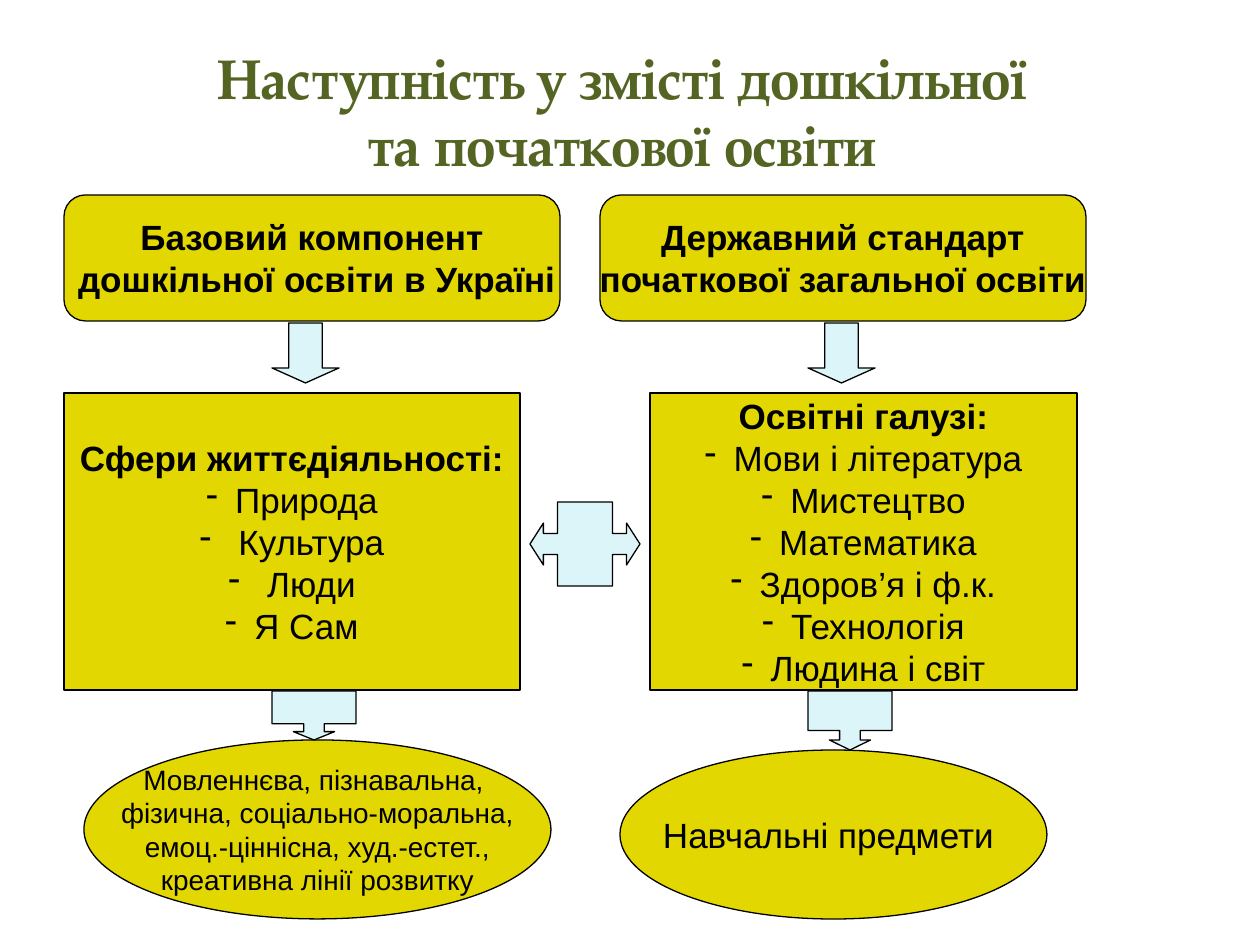
from lxml import etree
from pptx import Presentation
from pptx import util as u
from pptx.dml.color import RGBColor
from pptx.enum import shapes, text
from pptx.oxml.ns import qn

SCALE = 914400 / 126
GOLD = RGBColor(0xE2, 0xD7, 0x00)
AQUA = RGBColor(0xDB, 0xF5, 0xF9)
OLIVE = RGBColor(0x54, 0x64, 0x22)
BLACK = RGBColor(0, 0, 0)
KIND = shapes.MSO_SHAPE


def px(n):
    return u.Emu(round(n * SCALE))


class Deck:
    def __init__(self, show):
        self.slide = show.slides.add_slide(show.slide_layouts[5])
        self.face = "Arial"
        self.hang = px(29)

    def place(self, shape, box):
        shape.left, shape.top, shape.width, shape.height = map(px, box)

    def label(self, para, words, size, color=BLACK, bold=False, face=None):
        para.alignment = text.PP_ALIGN.CENTER
        run = para.add_run()
        run.text = words
        font = run.font
        font.name = face or self.face
        font.size = u.Pt(size)
        font.bold = bold
        font.color.rgb = color

    def title(self, box, lines):
        shape = self.slide.shapes.title
        self.place(shape, box)
        frame = shape.text_frame
        frame.word_wrap = True
        frame.auto_size = text.MSO_AUTO_SIZE.NONE
        frame.vertical_anchor = text.MSO_ANCHOR.BOTTOM
        para = frame.paragraphs[0]
        for i, line in enumerate(lines):
            if i:
                para.add_line_break()
            self.label(para, line, 32, OLIVE, True, "TeX Gyre Pagella")

    def shape(self, kind, box, fill=GOLD, adj=()):
        shape = self.slide.shapes.add_shape(kind, *map(px, box))
        shape.shadow.inherit = False
        shape.fill.solid()
        shape.fill.fore_color.rgb = fill
        shape.line.color.rgb = BLACK
        shape.line.width = u.Pt(0.75)
        for i, value in enumerate(adj):
            shape.adjustments[i] = value
        return shape

    def dash(self, para):
        props = para._p.get_or_add_pPr()
        props.set("marL", str(self.hang))
        props.set("indent", str(-self.hang))
        etree.SubElement(props, qn("a:buFontTx"))
        etree.SubElement(props, qn("a:buChar")).set("char", "-")

    def panel(self, kind, box, lines, size=20, bold=False, items=(), adj=()):
        frame = self.shape(kind, box, adj=adj).text_frame
        frame.word_wrap = False
        frame.vertical_anchor = text.MSO_ANCHOR.MIDDLE
        for i, line in enumerate([*lines, *items]):
            para = frame.add_paragraph() if i else frame.paragraphs[0]
            listed = i >= len(lines)
            if listed:
                self.dash(para)
            self.label(para, line, size, bold=bold and not listed)

    def arrow(self, kind, box, adj):
        self.shape(kind, box, AQUA, adj)


def main():
    show = Presentation()
    show.slide_width, show.slide_height = px(1260), px(945)
    deck = Deck(show)
    deck.title((94, 55, 1071, 129),
               ["Наступність у змісті дошкільної ", "та початкової освіти "])

    deck.panel(KIND.RECTANGLE, (64, 393, 456, 297),
               ["Сфери життєдіяльності:"], bold=True,
               items=["Природа", " Культура", " Люди", "Я Сам"])
    deck.panel(KIND.RECTANGLE, (650, 393, 427, 297),
               ["Освітні галузі:"], bold=True,
               items=["Мови і література", "Мистецтво", "Математика",
                      "Здоров’я і ф.к.", "Технологія", "Людина і світ"])

    heads = [
        (64, 496, ["Базовий компонент", " дошкільної освіти в Україні"]),
        (600, 486, ["Державний стандарт", "початкової загальної освіти"]),
    ]
    for left, width, lines in heads:
        deck.panel(KIND.ROUNDED_RECTANGLE, (left, 195, width, 126), lines,
                   bold=True, adj=[0.17])

    deck.panel(KIND.OVAL, (84, 740, 467, 179),
               ["Мовленнєва, пізнавальна, ", "фізична, соціально-моральна,",
                "емоц.-ціннісна, худ.-естет.,", " креативна лінії розвитку "],
               size=16)
    deck.panel(KIND.OVAL, (620, 750, 427, 169), ["Навчальні предмети "])

    for left, height, ratio in [(272, 49, 0.42), (808, 59, 0.35)]:
        deck.arrow(KIND.DOWN_ARROW, (left, 323, 67, 60), [0.5, 0.25])
        deck.arrow(KIND.DOWN_ARROW_CALLOUT, (left, 691, 84, height),
                   [ratio, ratio, 0.17, 0.67])
    deck.arrow(KIND.LEFT_RIGHT_ARROW_CALLOUT, (530, 502, 110, 84),
               [0.25, 0.25, 0.16, 0.5])
    show.save("out.pptx")


if __name__ == "__main__":
    main()
